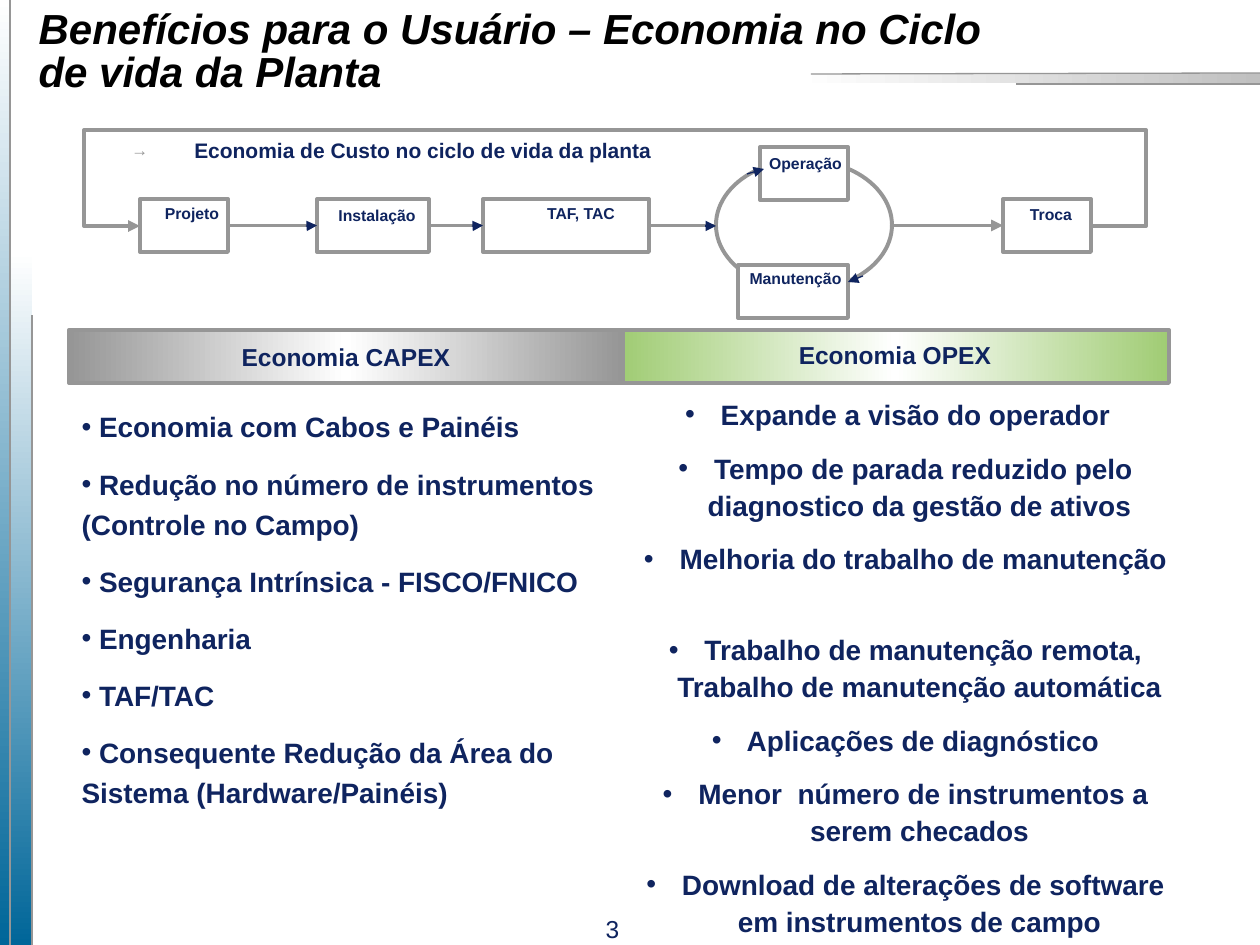
from pptx import Presentation
from pptx.dml.color import RGBColor
from pptx.enum.shapes import MSO_CONNECTOR as Link, MSO_SHAPE as Kind
from pptx.enum.text import MSO_ANCHOR as Anchor, MSO_AUTO_SIZE as Fit, PP_ALIGN as Align
from pptx.oxml import parse_xml
from pptx.oxml.ns import nsdecls, qn
from pptx.util import Pt

PX = 914400 / 126
NAVY = RGBColor(0x0F, 0x24, 0x5F)
GRAY = RGBColor(0x96, 0x96, 0x96)
SILVER = RGBColor(0xC0, 0xC0, 0xC0)
BLUE = RGBColor(0x00, 0x66, 0x99)
GREEN = RGBColor(0xA0, 0xCC, 0x74)
WHITE = RGBColor(0xFF, 0xFF, 0xFF)
BLACK = RGBColor(0, 0, 0)

SAVINGS = [
    " Economia com Cabos e Painéis",
    " Redução no número de instrumentos (Controle no Campo)",
    " Segurança Intrínsica - FISCO/FNICO",
    " Engenharia",
    " TAF/TAC",
    " Consequente Redução da Área do Sistema (Hardware/Painéis)",
]
GAINS = [
    " Expande a visão do operador\t",
    " Tempo de parada reduzido pelo diagnostico da gestão de ativos",
    " Melhoria do trabalho de manutenção",
    " Trabalho de manutenção remota, Trabalho de manutenção automática",
    " Aplicações de diagnóstico",
    " Menor  número de instrumentos a serem checados",
    " Download de alterações de software em instrumentos de campo",
]
# Steps: name, box, label offset and width (relative to the diagram)
STEPS = [
    ("TAF, TAC", (399, 69, 166, 53), (10, -1, 176)),
    ("Instalação", (233, 69, 112, 53), (-1, 1, 122)),
    ("Manutenção", (654, 135, 110, 53), (-7, -2, 129)),
    ("Operação", (676, 17, 88, 53), (-8, 1, 107)),
    ("Troca", (919, 69, 88, 53), (-1, 0, 98)),
    ("Projeto", (56, 69, 88, 53), (2, -1, 100)),
]


def emu(*nums):
    return [round(n * PX) for n in nums]


def xml(tag, attrs="", inner=""):
    return parse_xml(f"<a:{tag} {nsdecls('a')} {attrs}>{inner}</a:{tag}>")


def stroke(item, color, width, arrow=False):
    item.line.color.rgb = color
    item.line.width = Pt(width)
    if arrow:
        item.element.spPr.find(qn("a:ln")).append(xml("tailEnd", 'type="triangle"'))


def add_line(slide, x1, y1, x2, y2, color=GRAY, width=0.75, arrow=False):
    line = slide.shapes.add_connector(Link.STRAIGHT, *emu(x1, y1, x2, y2))
    stroke(line, color, width, arrow)
    line.element.spPr.append(xml("effectLst"))
    return line


def add_box(slide, box, kind=Kind.RECTANGLE, edge=True):
    item = slide.shapes.add_shape(kind, *emu(*box))
    item.shadow.inherit = False
    item.fill.solid()
    item.fill.fore_color.rgb = WHITE
    if edge:
        stroke(item, GRAY, 2.25)
    else:
        item.line.fill.background()
    return item


def blend(item, colors, angle=0):
    last = len(colors) - 1
    stops = "".join(
        f'<a:gs pos="{100000 * i // last}"><a:srgbClr val="{c}"/></a:gs>'
        for i, c in enumerate(colors))
    item.fill.gradient()
    spot = item.element.spPr
    spot.replace(spot.find(qn("a:gradFill")), xml(
        "gradFill", 'rotWithShape="1"',
        f'<a:gsLst>{stops}</a:gsLst><a:lin ang="{angle * 60000}" scaled="0"/>'))


def add_run(para, text, size, color=NAVY, bold=True):
    run = para.add_run()
    run.text = text
    font = run.font
    font.name, font.size, font.bold = "Arial", Pt(size), bold
    font.color.rgb = color
    return run


def bullet(para, sign, color, margin, scale=100):
    props = para._p.get_or_add_pPr()
    left = emu(margin)[0]
    props.set("marL", str(left))
    props.set("indent", str(-left))
    props.append(xml("buClr", inner=f'<a:srgbClr val="{color}"/>'))
    props.append(xml("buSzPct", f'val="{scale * 1000}"'))
    props.append(xml("buFont", 'typeface="Arial"'))
    props.append(xml("buChar", f'char="{sign}"'))


def add_text(slide, box, text, size, bold=True):
    item = slide.shapes.add_textbox(*emu(*box))
    item.text_frame.word_wrap = True
    para = item.text_frame.paragraphs[0]
    para.alignment = Align.CENTER
    add_run(para, text, size, bold=bold)
    return para


def place(item, box):
    item.left, item.top, item.width, item.height = emu(*box)
    frame = item.text_frame
    frame.auto_size = Fit.NONE
    frame.word_wrap = True
    return frame


def add_frame(slide, box):
    x, y, w, h = box
    # Side bars and header bar
    for bar, colors, angle in [
        ((x, y, 10, h), (WHITE, BLUE), 90),
        ((x + 10, y + 252, 22, h - 252), (WHITE, BLUE), 90),
        ((x + 798, y + 73, w - 798, 10), (WHITE, SILVER), 0),
    ]:
        blend(add_box(slide, bar, edge=False), colors, angle)
    # Thin rules
    add_line(slide, x + 32, y + 315, x + 32, y + h)
    add_line(slide, x + 10, y, x + 10, y + h)
    add_line(slide, x + w, y + 84, x + 1016, y + 84)
    add_line(slide, x + w, y + 73, x + 811, y + 74)
    # Page number
    add_text(slide, (x + 572, y + 908, 81, 42), "3", 14, bold=False)


def add_title(slide, box, text):
    frame = place(slide.shapes.title, box)
    frame.vertical_anchor = Anchor.BOTTOM
    para = frame.paragraphs[0]
    para.alignment = Align.LEFT
    para.line_spacing = 0.85
    run = add_run(para, text, 24, BLACK)
    run.font.italic = True
    props = run._r.get_or_add_rPr()
    props.find(qn("a:solidFill")).addnext(xml(
        "effectLst", inner='<a:outerShdw dist="38100" dir="2700000">'
        f'<a:srgbClr val="{GRAY}"/></a:outerShdw>'))


def add_list(item, box, lines, spacing, margin, align, wide=()):
    frame = place(item, box)
    for i, text in enumerate(lines):
        para = frame.paragraphs[0] if i == 0 else frame.add_paragraph()
        bullet(para, "•", NAVY, margin)
        para.alignment = align
        para.line_spacing = spacing
        para.space_before = Pt(4.8 if i else 0)
        para.space_after = Pt(26 if i in wide else 4.8)
        add_run(para, text, 16)


def add_cycle(slide, box):
    x, y, w, h = box
    mid = y + 96
    # Heading
    para = add_text(slide, (x + 31, y + 4, 553, 42),
                    "Economia de Custo no ciclo de vida da planta", 12)
    bullet(para, "→", GRAY, 63, 80)
    para.line_spacing = 0.9
    # Main line and loop, behind the steps
    main = add_line(slide, x + 144, mid, x + 919, mid, width=2.25, arrow=True)
    add_box(slide, (x + 632, y + 30, 176, 130), Kind.OVAL)
    boxes = {}
    for name, (left, top, bw, bh), _ in STEPS:
        boxes[name] = add_box(slide, (x + left, y + top, bw, bh))
    main.begin_connect(boxes["Projeto"], 3)
    main.end_connect(boxes["Troca"], 1)
    for name, (left, top, *_), (dx, dy, lw) in STEPS:
        add_text(slide, (x + left + dx, y + top + dy, lw, 31), name, 9)
    # Return path from the last step to the first
    path = [emu(x + a, y + b) for a, b in
            [(1007, 96), (w, 96), (w, 0), (0, 0), (0, 96), (56, 96)]]
    pen = slide.shapes.build_freeform(*path[0], scale=1.0)
    pen.add_line_segments(path[1:], close=False)
    back = pen.convert_to_shape()
    back.shadow.inherit = False
    back.fill.background()
    stroke(back, GRAY, 2.25, arrow=True)
    # Navy arrowheads
    for name, left in [("Instalação", 233), ("TAF, TAC", 399)]:
        tip = add_line(slide, x + left - 11, mid, x + left, mid, NAVY, arrow=True)
        tip.end_connect(boxes[name], 1)
    for x1, y1, x2, y2 in [(621, 96, 632, 96), (663, 44, 680, 39),
                           (779, 146, 764, 152)]:
        add_line(slide, x + x1, y + y1, x + x2, y + y2, NAVY, arrow=True)


def add_band(slide, box, text, color, spacing):
    item = add_box(slide, box)
    blend(item, (color, WHITE, color))
    frame = item.text_frame
    frame.word_wrap = False
    frame.vertical_anchor = Anchor.MIDDLE
    para = frame.paragraphs[0]
    para.alignment = Align.CENTER
    para.line_spacing = spacing
    add_run(para, text, 14)


def main():
    deck = Presentation()
    deck.slide_width, deck.slide_height = emu(1260, 945)
    slide = deck.slides.add_slide(deck.slide_layouts[3])
    add_frame(slide, (0, 0, 1260, 945))
    add_title(slide, (26, 23, 1023, 79),
              "Benefícios para o Usuário – Economia no Ciclo de vida da Planta")
    left, right = slide.placeholders[1], slide.placeholders[2]
    add_list(left, (69, 397, 556, 466), SAVINGS, 1.2, 0, Align.LEFT)
    add_list(right, (615, 388, 581, 449), GAINS, 1.1, 28, Align.CENTER, wide=(2,))
    add_cycle(slide, (84, 130, 1062, 188))
    add_band(slide, (621, 330, 548, 53), "Economia OPEX", GREEN, 0.9)
    add_band(slide, (69, 330, 554, 53), "Economia CAPEX", GRAY, 1.0)
    deck.save("out.pptx")


if __name__ == "__main__":
    main()
